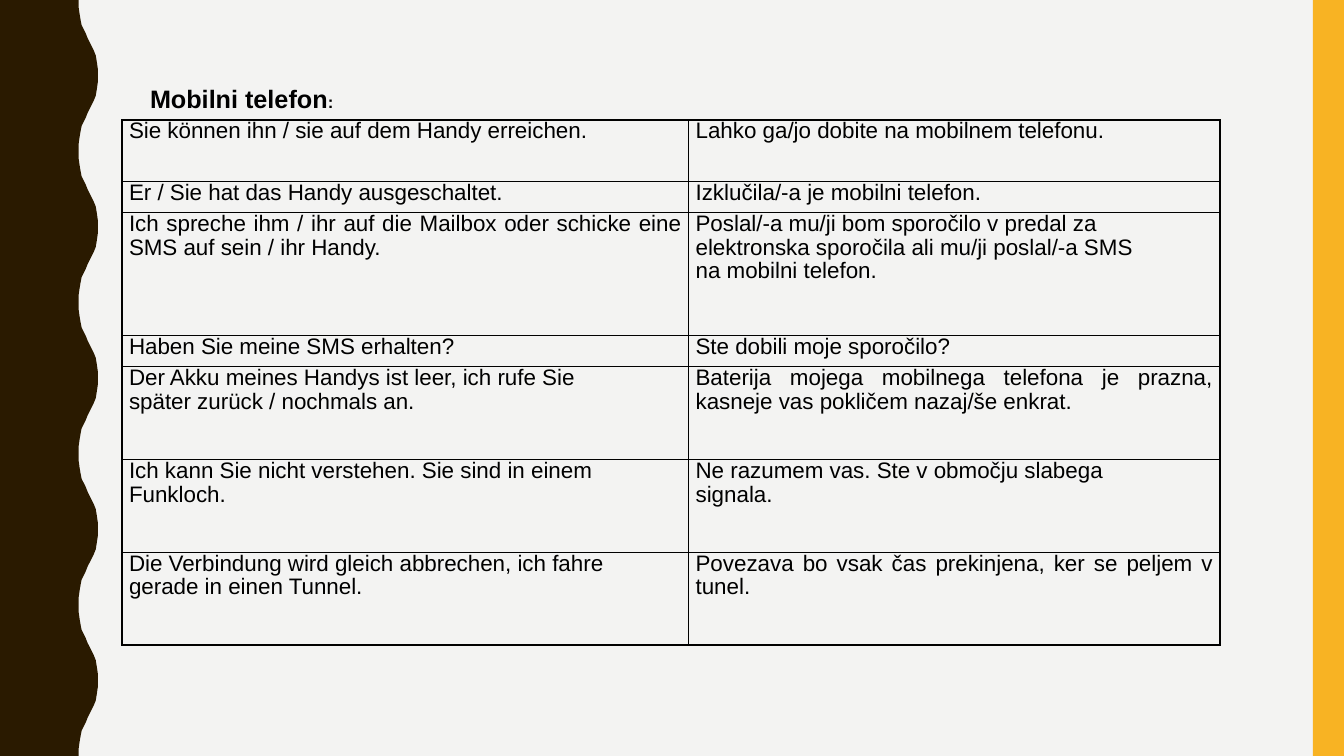
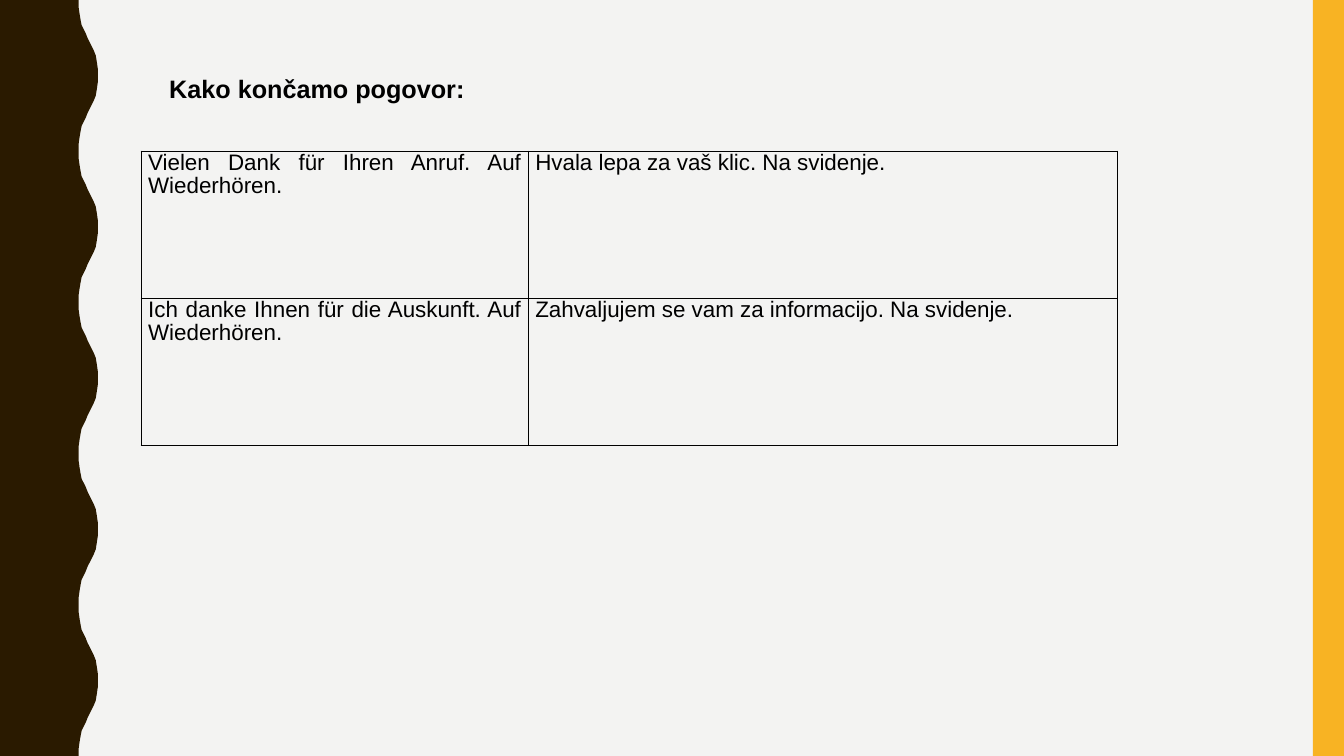
"""Build two slides of German and Slovene telephone phrases."""
from dataclasses import dataclass

from lxml.etree import SubElement
from pptx import Presentation
from pptx.dml.color import RGBColor
from pptx.enum.shapes import MSO_SHAPE
from pptx.enum.text import MSO_ANCHOR, PP_ALIGN
from pptx.oxml.ns import qn
from pptx.shapes.autoshape import Shape
from pptx.slide import Slide
from pptx.table import _Cell as Cell
from pptx.util import Inches, Pt

PAPER = RGBColor(0xF3, 0xF3, 0xF2)
BROWN = RGBColor(0x2A, 0x1A, 0x00)
AMBER = RGBColor(0xF8, 0xB3, 0x23)
BLACK = RGBColor(0x00, 0x00, 0x00)
FONT = "Arial"
SLIDE_WIDTH, SLIDE_HEIGHT = 13.33, 7.5
STRIPE_WIDTH = 0.31
WAVE_PERIOD = 1.5
HALF_WAVE = [
    (0.78, 0), (0.78, 0.07), (0.79, 0.14), (0.8, 0.2), (0.81, 0.25),
    (0.83, 0.29), (0.85, 0.33), (0.87, 0.38), (0.89, 0.42), (0.91, 0.46),
    (0.93, 0.5), (0.95, 0.55), (0.96, 0.61), (0.97, 0.68), (0.97, 0.75),
]


@dataclass(frozen=True)
class Heading:
    """A slide heading: runs of text with sizes, and its place."""
    runs: list[tuple[str, int]]
    left: float
    top: float
    width: float


@dataclass(frozen=True)
class Phrasebook:
    """A two-language phrase table under a heading."""
    heading: Heading
    left: float
    top: float
    columns: list[float]
    rows: list[float]
    phrases: list[tuple[str, str]]


PHRASEBOOKS = [
    Phrasebook(
        Heading([("Mobilni telefon", 18), (":", 12)], 1.39, 0.78, 2.04),
        1.21, 1.19, [5.62, 5.27], [0.61, 0.31, 1.22, 0.31, 0.92, 0.92, 0.92],
        [
            ("Sie können ihn / sie auf dem Handy erreichen.",
             "Lahko ga/jo dobite na mobilnem telefonu."),
            ("Er / Sie hat das Handy ausgeschaltet.",
             "Izklučila/-a je mobilni telefon."),
            ("Ich spreche ihm / ihr auf die Mailbox oder schicke eine SMS "
             "auf sein / ihr Handy.",
             "Poslal/-a mu/ji bom sporočilo v predal za\n"
             "elektronska sporočila ali mu/ji poslal/-a SMS\n"
             "na mobilni telefon."),
            ("Haben Sie meine SMS erhalten?", "Ste dobili moje sporočilo?"),
            ("Der Akku meines Handys ist leer, ich rufe Sie\n"
             "später zurück / nochmals an.",
             "Baterija mojega mobilnega telefona je prazna, kasneje vas "
             "pokličem nazaj/še enkrat."),
            ("Ich kann Sie nicht verstehen. Sie sind in einem\nFunkloch.",
             "Ne razumem vas. Ste v območju slabega\nsignala."),
            ("Die Verbindung wird gleich abbrechen, ich fahre\n"
             "gerade in einen Tunnel.",
             "Povezava bo vsak čas prekinjena, ker se peljem v tunel."),
        ],
    ),
    Phrasebook(
        Heading([("Kako končamo pogovor:", 18)], 1.58, 0.68, 3.16),
        1.4, 1.5, [3.84, 5.84], [1.46, 1.46],
        [
            ("Vielen Dank für Ihren Anruf. Auf Wiederhören.",
             "Hvala lepa za vaš klic. Na svidenje."),
            ("Ich danke Ihnen für die Auskunft. Auf Wiederhören.",
             "Zahvaljujem se vam za informacijo. Na svidenje."),
        ],
    ),
]


def paint(shape: Shape, color: RGBColor) -> None:
    """Give a shape a flat fill without line or shadow."""
    shape.fill.solid()
    shape.fill.fore_color.rgb = color
    shape.line.fill.background()
    shape.shadow.inherit = False


def draw_bands(slide: Slide) -> None:
    """Draw the wavy left band and the right stripe."""
    wave = HALF_WAVE + [(x, WAVE_PERIOD - y) for x, y in HALF_WAVE[-2::-1]]
    edge = [(Inches(x), Inches(y + crest * WAVE_PERIOD))
            for crest in range(round(SLIDE_HEIGHT / WAVE_PERIOD))
            for x, y in wave]
    outline = slide.shapes.build_freeform(0, 0)
    outline.add_line_segments(edge + [(0, Inches(SLIDE_HEIGHT))], close=True)
    paint(outline.convert_to_shape(), BROWN)
    stripe = slide.shapes.add_shape(
        MSO_SHAPE.RECTANGLE, Inches(SLIDE_WIDTH - STRIPE_WIDTH), 0,
        Inches(STRIPE_WIDTH), Inches(SLIDE_HEIGHT))
    paint(stripe, AMBER)


def draw_heading(slide: Slide, heading: Heading) -> None:
    """Write the bold heading above the table."""
    box = slide.shapes.add_textbox(
        Inches(heading.left), Inches(heading.top),
        Inches(heading.width), Inches(0.4))
    frame = box.text_frame
    frame.word_wrap = False
    frame.vertical_anchor = MSO_ANCHOR.MIDDLE
    for text, size in heading.runs:
        run = frame.paragraphs[0].add_run()
        run.text = text
        run.font.name, run.font.size, run.font.bold = FONT, Pt(size), True
        run.font.color.rgb = BLACK


def border(cell: Cell) -> None:
    """Rule all four sides of a cell in black."""
    properties = cell._tc.get_or_add_tcPr()
    for side in ("a:lnL", "a:lnR", "a:lnT", "a:lnB"):
        line = SubElement(properties, qn(side), w=str(Pt(1)))
        fill = SubElement(line, qn("a:solidFill"))
        SubElement(fill, qn("a:srgbClr"), val=str(BLACK))


def write_phrase(cell: Cell, phrase: str) -> None:
    """Fill a bordered, transparent cell with a justified phrase."""
    border(cell)
    cell.fill.background()
    cell.margin_left = cell.margin_right = Inches(0.07)
    cell.margin_top = cell.margin_bottom = 0
    cell.text_frame.text = phrase
    for paragraph in cell.text_frame.paragraphs:
        paragraph.alignment = PP_ALIGN.JUSTIFY
        paragraph.line_spacing = 0.95
        for run in paragraph.runs:
            run.font.name, run.font.size = FONT, Pt(16)
            run.font.color.rgb = BLACK


def draw_phrases(slide: Slide, book: Phrasebook) -> None:
    """Lay out the phrase table."""
    table = slide.shapes.add_table(
        len(book.rows), len(book.columns), Inches(book.left), Inches(book.top),
        Inches(sum(book.columns)), Inches(sum(book.rows))).table
    table.first_row = table.horz_banding = False
    for column, width in zip(table.columns, book.columns):
        column.width = Inches(width)
    for row, height, phrases in zip(table.rows, book.rows, book.phrases):
        row.height = Inches(height)
        for cell, phrase in zip(row.cells, phrases):
            write_phrase(cell, phrase)


def main() -> None:
    """Build and save the presentation."""
    deck = Presentation()
    deck.slide_width, deck.slide_height = Inches(SLIDE_WIDTH), Inches(SLIDE_HEIGHT)
    backdrop = deck.slide_master.background.fill
    backdrop.solid()
    backdrop.fore_color.rgb = PAPER
    for book in PHRASEBOOKS:
        slide = deck.slides.add_slide(deck.slide_layouts[6])
        draw_bands(slide)
        draw_phrases(slide, book)
        draw_heading(slide, book.heading)
    deck.save("out.pptx")


if __name__ == "__main__":
    main()
